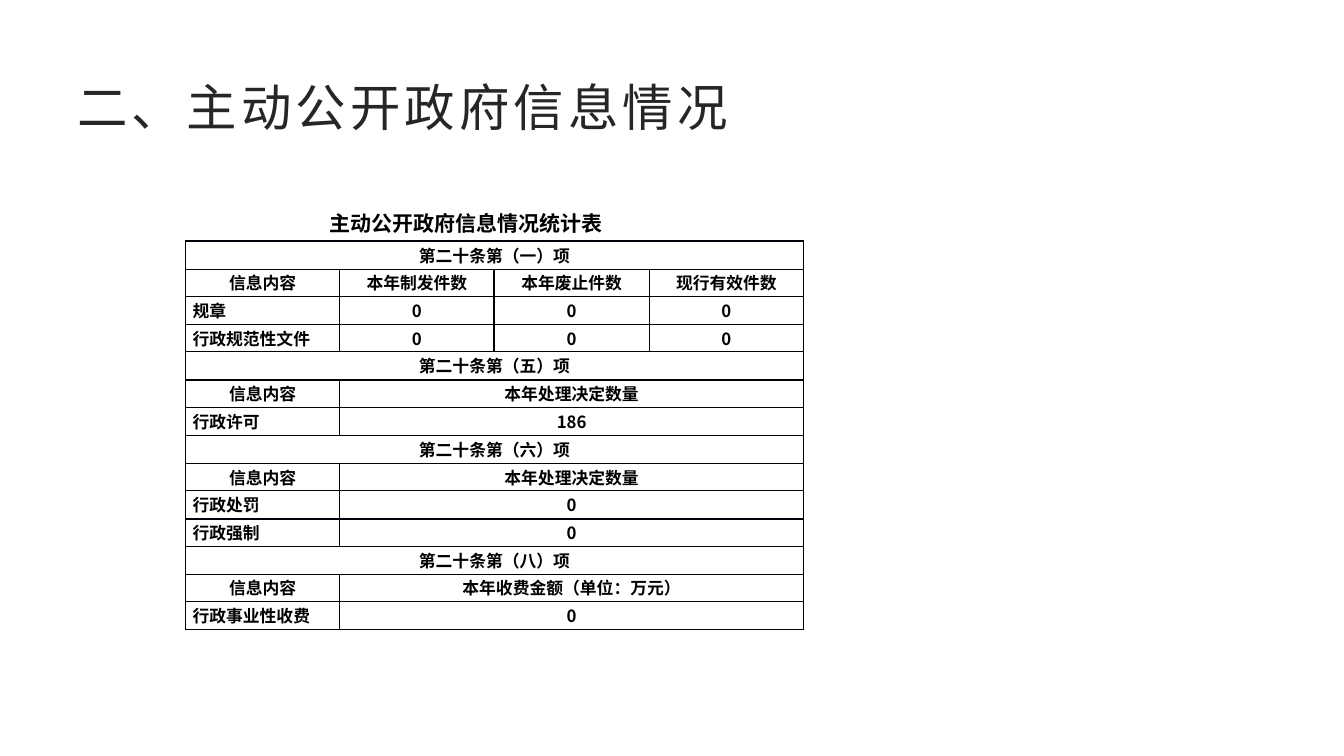
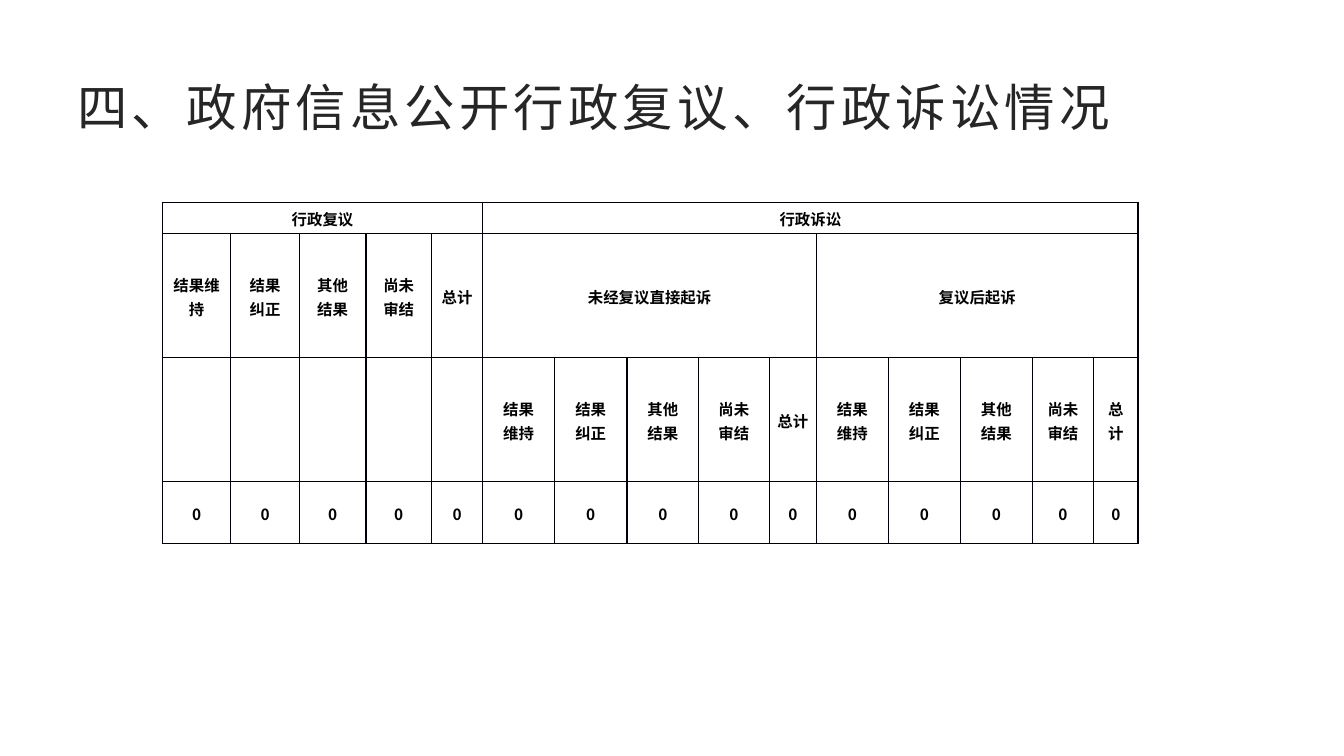
from lxml import etree
from pptx import Presentation
from pptx.dml.color import RGBColor
from pptx.enum.text import MSO_ANCHOR, PP_ALIGN
from pptx.oxml.ns import qn
from pptx.util import Emu, Pt

EMU_PER_PX = 9144
SLIDE_SIZE = (1333, 750)
BLANK_LAYOUT = 6

LEFT = PP_ALIGN.LEFT
CENTER = PP_ALIGN.CENTER
TOP = MSO_ANCHOR.TOP
MIDDLE = MSO_ANCHOR.MIDDLE

BLACK = RGBColor(0x00, 0x00, 0x00)
WHITE = RGBColor(0xFF, 0xFF, 0xFF)
TITLE_GRAY = RGBColor(0x26, 0x26, 0x26)
BORDER = RGBColor(0x00, 0x00, 0x08)

LATIN_FONT = "Arial"
CHINESE_FONT = "Noto Sans CJK SC"

TITLE_STYLE = {"size": 36, "color": TITLE_GRAY, "font": LATIN_FONT, "bold": False, "spacing": 3}
CAPTION_STYLE = {"size": 15, "align": CENTER, "line_height": 29.5}

CONTENT_HEADER = "信息内容"
DISCLOSURE_SECTIONS = [
    ("第二十条第（一）项", ["本年制发件数", "本年废止件数", "现行有效件数"],
     [("规章", ["0", "0", "0"]), ("行政规范性文件", ["0", "0", "0"])]),
    ("第二十条第（五）项", ["本年处理决定数量"], [("行政许可", ["186"])]),
    ("第二十条第（六）项", ["本年处理决定数量"], [("行政处罚", ["0"]), ("行政强制", ["0"])]),
    ("第二十条第（八）项", ["本年收费金额（单位：万元）"], [("行政事业性收费", ["0"])]),
]
OUTCOMES = ["结果\n纠正", "其他\n结果", "尚未\n审结", "总计"]
REVIEW_COLUMNS = [68, 68, 66, 65, 51, 71, 72, 71, 70, 47, 71, 72, 71, 61, 44]
REVIEW_ROWS = [31, 123, 123, 61]


def px(length):
    return Emu(length * EMU_PER_PX)


def split(total, count):
    edges = [round(total * index / count) for index in range(count + 1)]
    return [end - start for start, end in zip(edges, edges[1:])]


def wide(text, span):
    return [text] + [None] * (span - 1)


def write_text(frame, text, *, size, color=BLACK, font=CHINESE_FONT, bold=True,
               align=LEFT, line_height=None, spacing=0):
    for index, line in enumerate(text.split("\n")):
        para = frame.add_paragraph() if index else frame.paragraphs[0]
        para.alignment = align
        if line_height:
            para.line_spacing = Pt(line_height)
        span = para.add_run()
        span.text = line
        span.font.size = Pt(size)
        span.font.bold = bold
        span.font.color.rgb = color
        span.font.name = font
        properties = span.font._element
        etree.SubElement(properties, qn("a:ea"), typeface=CHINESE_FONT)
        if spacing:
            properties.set("spc", str(spacing * 100))


def add_text(page, text, left, top, width, height, anchor=TOP, **style):
    box = page.shapes.add_textbox(px(left), px(top), px(width), px(height))
    box.text_frame.word_wrap = True
    box.text_frame.vertical_anchor = anchor
    write_text(box.text_frame, text, **style)


def add_page(deck, title):
    page = deck.slides.add_slide(deck.slide_layouts[BLANK_LAYOUT])
    add_text(page, title, 67, 67, 1200, 77, anchor=MIDDLE, **TITLE_STYLE)
    return page


def style_cell(cell, fill):
    cell.margin_left = cell.margin_right = px(7)
    cell.margin_top = cell.margin_bottom = 0
    cell.vertical_anchor = MIDDLE
    properties = cell._tc.get_or_add_tcPr()
    for side in ("lnL", "lnR", "lnT", "lnB"):
        line = etree.SubElement(properties, qn(f"a:{side}"), w=str(Pt(1)))
        paint = etree.SubElement(line, qn("a:solidFill"))
        etree.SubElement(paint, qn("a:srgbClr"), val=str(BORDER))
    if fill is None:
        cell.fill.background()
    else:
        cell.fill.solid()
        cell.fill.fore_color.rgb = fill


def add_grid(page, left, top, columns, heights, content, size, fill=None, left_labels=()):
    frame = page.shapes.add_table(len(heights), len(columns), px(left), px(top),
                                  px(sum(columns)), px(sum(heights)))
    table = frame.table
    table.first_row = False
    table.horz_banding = False
    for column, width in zip(table.columns, columns):
        column.width = px(width)
    for row, height in zip(table.rows, heights):
        row.height = px(height)
    for row_index, texts in enumerate(content):
        for column_index, text in enumerate(texts):
            cell = table.cell(row_index, column_index)
            style_cell(cell, fill)
            if text is None:
                continue
            last = column_index
            while last + 1 < len(texts) and texts[last + 1] is None:
                last += 1
            if last > column_index:
                cell.merge(table.cell(row_index, last))
            if text:
                align = LEFT if text in left_labels else CENTER
                write_text(cell.text_frame, text, size=size, align=align, line_height=17)


def disclosure_row(label, values):
    return [label] + (values if len(values) == 3 else wide(values[0], 3))


def build_disclosure(deck):
    page = add_page(deck, "二、主动公开政府信息情况")
    add_text(page, "主动公开政府信息情况统计表", 184, 188, 556, 51, **CAPTION_STYLE)
    content = []
    labels = set()
    for heading, headers, entries in DISCLOSURE_SECTIONS:
        content.append(wide(heading, 4))
        content.append(disclosure_row(CONTENT_HEADER, headers))
        for label, values in entries:
            content.append(disclosure_row(label, values))
            labels.add(label)
    add_grid(page, 184, 239, split(613, 4), split(386, len(content)), content,
             size=12, fill=WHITE, left_labels=labels)


def build_review(deck):
    page = add_page(deck, "四、政府信息公开行政复议、行政诉讼情况")
    lawsuit_outcomes = ["结果\n维持"] + OUTCOMES
    content = [
        wide("行政复议", 5) + wide("行政诉讼", 10),
        ["结果维持"] + OUTCOMES + wide("未经复议直接起诉", 5) + wide("复议后起诉", 5),
        [""] * 5 + lawsuit_outcomes * 2,
        ["0"] * 15,
    ]
    add_grid(page, 161, 201, REVIEW_COLUMNS, REVIEW_ROWS, content, size=11)


def main():
    deck = Presentation()
    deck.slide_width, deck.slide_height = map(px, SLIDE_SIZE)
    build_disclosure(deck)
    build_review(deck)
    deck.save("out.pptx")


if __name__ == "__main__":
    main()
